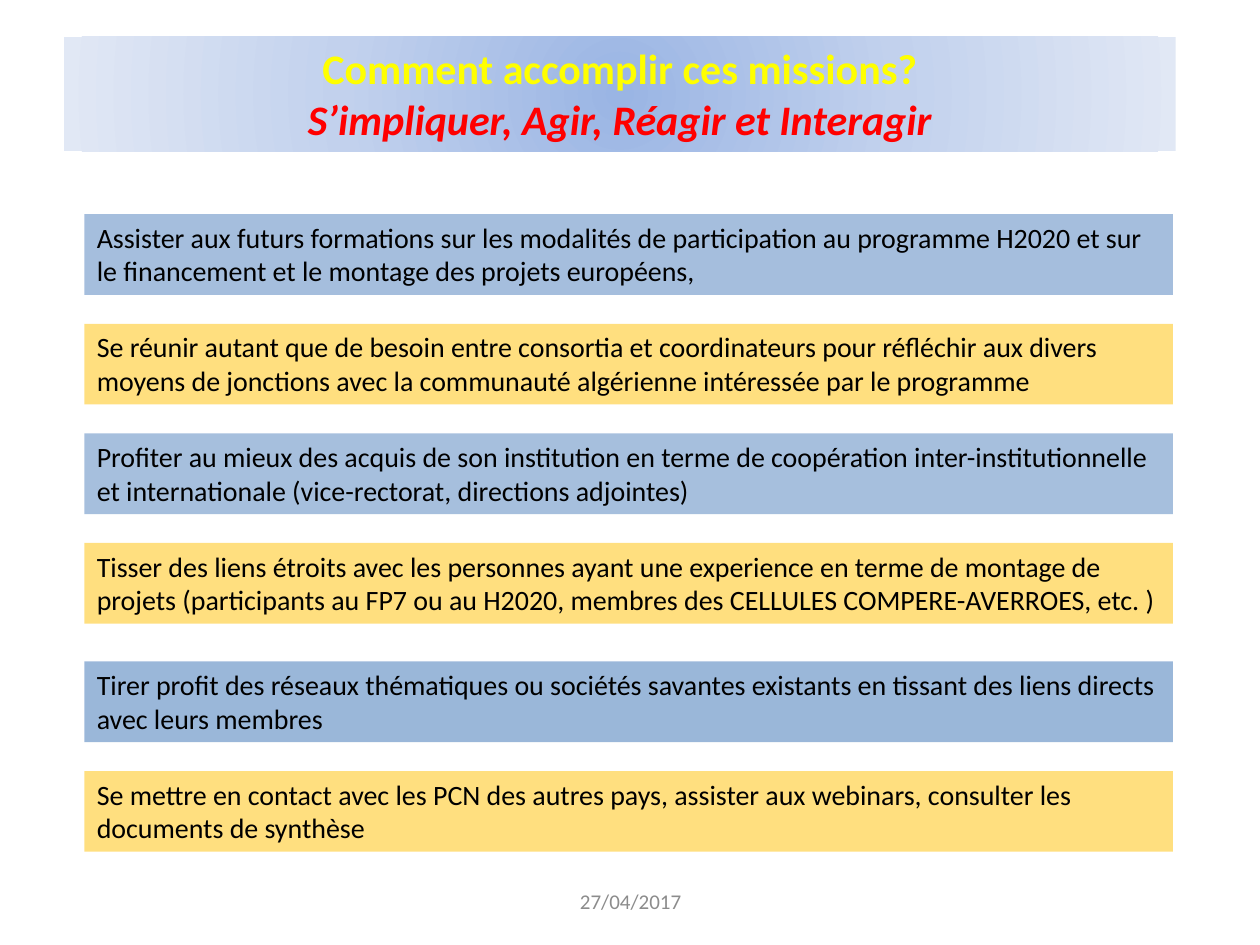
from lxml import etree
from pptx import Presentation
from pptx.dml.color import RGBColor
from pptx.enum.shapes import MSO_SHAPE
from pptx.enum.text import MSO_ANCHOR, MSO_AUTO_SIZE, PP_ALIGN
from pptx.oxml import parse_xml
from pptx.oxml.ns import nsdecls, qn
from pptx.util import Inches, Pt

RECTANGLE = MSO_SHAPE.RECTANGLE
TOP, MIDDLE = MSO_ANCHOR.TOP, MSO_ANCHOR.MIDDLE
LEFT, CENTER = PP_ALIGN.LEFT, PP_ALIGN.CENTER
NO_AUTOFIT = MSO_AUTO_SIZE.NONE

BLACK = RGBColor(0x00, 0x00, 0x00)
GRAY = RGBColor(0x8C, 0x8C, 0x8C)
YELLOW = RGBColor(0xFF, 0xFF, 0x00)
RED = RGBColor(0xFF, 0x00, 0x00)
BLUE = RGBColor(0x4F, 0x81, 0xBD)
AMBER = RGBColor(0xFF, 0xC0, 0x00)
TITLE_GRADIENT = (
    (0, RGBColor(0x9A, 0xB5, 0xE4)),
    (50, RGBColor(0xC2, 0xD1, 0xED)),
    (100, RGBColor(0xE1, 0xE8, 0xF5)),
)

FONT = "Calibri"
ACTION_LEFT, ACTION_WIDTH, ACTION_HEIGHT = 0.67, 8.64, 0.64
ACTION_PITCH = 0.87

# Each group: top of its first box, then (text, color, opacity in percent)
ACTION_GROUPS = (
    (1.7, (
        ("Assister aux futurs formations sur les modalités de participation au "
         "programme H2020 et sur le financement et le montage des projets européens,",
         BLUE, 51),
        ("Se réunir autant que de besoin entre consortia et coordinateurs pour "
         "réfléchir aux divers moyens de jonctions avec la communauté algérienne "
         "intéressée par le programme", AMBER, 50),
        ("Profiter au mieux des acquis de son institution en terme de coopération "
         "inter-institutionnelle et internationale (vice-rectorat, directions "
         "adjointes)", BLUE, 50),
        ("Tisser des liens étroits avec les personnes ayant une experience en terme "
         "de montage de projets (participants au FP7 ou au H2020, membres des "
         "CELLULES COMPERE-AVERROES, etc. )", AMBER, 50),
    )),
    (5.25, (
        ("Tirer profit des réseaux thématiques ou sociétés savantes existants en "
         "tissant des liens directs avec leurs membres", BLUE, 57),
        ("Se mettre en contact avec les PCN des autres pays, assister aux webinars, "
         "consulter les documents de synthèse", AMBER, 50),
    )),
)


def write_paragraph(paragraph, text, *, size, color, bold=False, italic=False,
                    align=LEFT):
    paragraph.alignment = align
    run = paragraph.add_run()
    run.text = text
    font = run.font
    font.name, font.size = FONT, Pt(size)
    font.bold, font.italic = bold, italic
    font.color.rgb = color


def prepare_frame(shape, anchor):
    frame = shape.text_frame
    frame.word_wrap = True
    frame.auto_size = NO_AUTOFIT
    frame.vertical_anchor = anchor
    return frame


def set_radial_gradient(shape, stops):
    """Fill the shape with a gradient that spreads from its centre."""
    stop_xml = "".join(
        f'<a:gs pos="{position * 1000}"><a:srgbClr val="{color}"/></a:gs>'
        for position, color in stops)
    shape.element.spPr.append(parse_xml(
        f'<a:gradFill {nsdecls("a")} rotWithShape="1"><a:gsLst>{stop_xml}</a:gsLst>'
        '<a:path path="circle"><a:fillToRect l="50000" t="50000" r="50000" '
        'b="50000"/></a:path></a:gradFill>'))


def set_opacity(shape, percent):
    color = shape.element.spPr.find(qn("a:solidFill")).find(qn("a:srgbClr"))
    etree.SubElement(color, qn("a:alpha")).set("val", str(percent * 1000))


def add_title(slide):
    title = slide.shapes.title
    title.left, title.top = Inches(0.51), Inches(0.29)
    title.width, title.height = Inches(8.82), Inches(0.91)
    set_radial_gradient(title, TITLE_GRADIENT)
    frame = prepare_frame(title, TOP)
    write_paragraph(frame.paragraphs[0], "Comment accomplir ces missions?",
                    size=24, color=YELLOW, bold=True, align=CENTER)
    write_paragraph(frame.add_paragraph(), "S’impliquer, Agir, Réagir et Interagir",
                    size=24, color=RED, bold=True, italic=True, align=CENTER)


def add_action(slide, top, text, color, opacity):
    box = slide.shapes.add_shape(
        RECTANGLE, Inches(ACTION_LEFT), Inches(top),
        Inches(ACTION_WIDTH), Inches(ACTION_HEIGHT))
    box.shadow.inherit = False
    box.fill.solid()
    box.fill.fore_color.rgb = color
    set_opacity(box, opacity)
    box.line.fill.background()
    frame = prepare_frame(box, TOP)
    write_paragraph(frame.paragraphs[0], text, size=16, color=BLACK)


def add_date(slide):
    box = slide.shapes.add_textbox(
        Inches(3.42), Inches(6.95), Inches(3.17), Inches(0.4))
    frame = prepare_frame(box, MIDDLE)
    write_paragraph(frame.paragraphs[0], "27/04/2017",
                    size=12, color=GRAY, align=CENTER)


def main():
    presentation = Presentation()
    presentation.slide_width, presentation.slide_height = Inches(10), Inches(7.5)
    slide = presentation.slides.add_slide(presentation.slide_layouts[5])
    add_title(slide)
    for first_top, actions in ACTION_GROUPS:
        for index, (text, color, opacity) in enumerate(actions):
            add_action(slide, first_top + index * ACTION_PITCH, text, color, opacity)
    add_date(slide)
    presentation.save("out.pptx")


if __name__ == "__main__":
    main()
